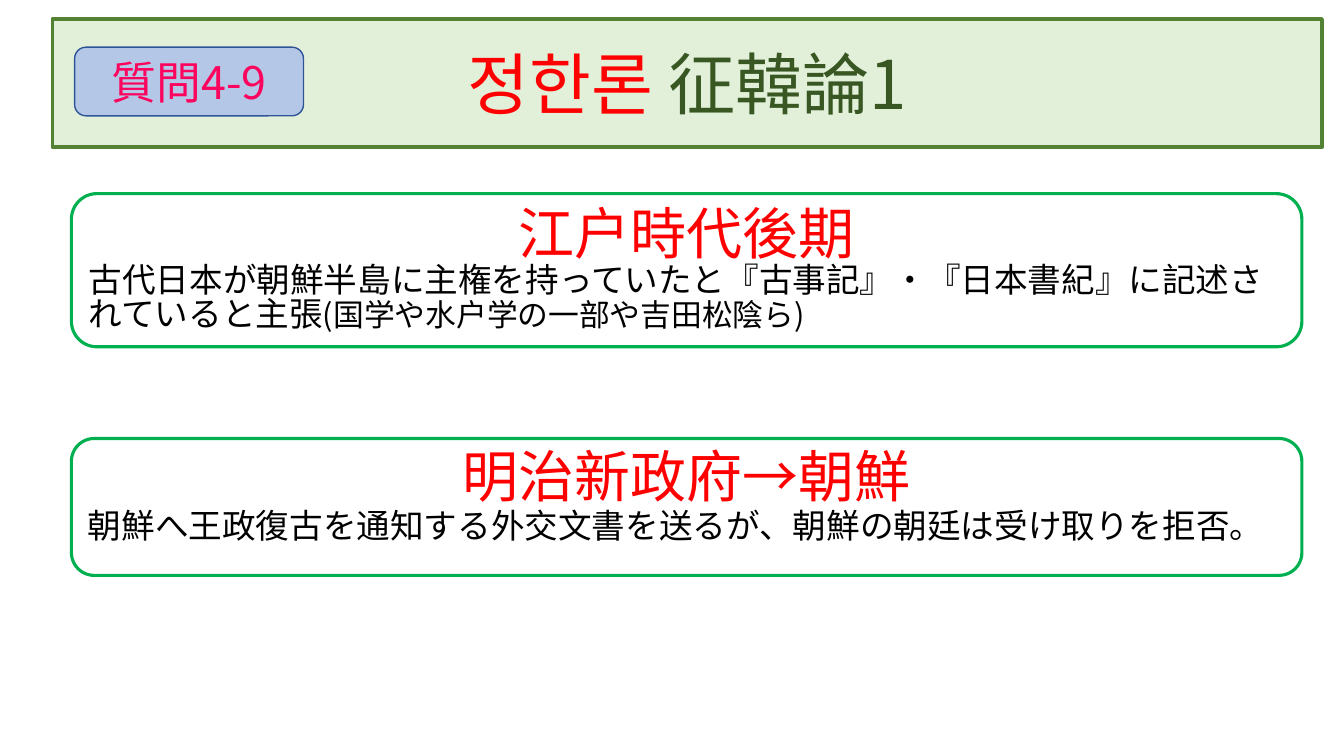
"""Build the slide on the Seikanron debate, question 4-9."""
from dataclasses import dataclass
from typing import Optional

from lxml import etree
from pptx import Presentation
from pptx.dml.color import RGBColor
from pptx.enum import shapes, text
from pptx.oxml import ns
from pptx.util import Cm, Pt

JAPANESE = "Noto Sans CJK JP"
KOREAN = "Noto Sans CJK KR"
RED = "FF0000"
BLACK = "000000"
GREEN = "00B050"
INSET = 0.13


@dataclass(frozen=True)
class Phrase:
    wording: str
    size: float
    color: str
    font: str = JAPANESE


@dataclass(frozen=True)
class Line:
    phrases: tuple[Phrase, ...]
    centred: bool = True
    spacing: Optional[float] = None


@dataclass(frozen=True)
class Panel:
    left: float
    top: float
    width: float
    height: float
    outline: str
    weight: float
    lines: tuple[Line, ...]
    fill: Optional[str] = None
    kind: shapes.MSO_SHAPE = shapes.MSO_SHAPE.ROUNDED_RECTANGLE
    bottom_inset: float = INSET


def rgb(value: str) -> RGBColor:
    return RGBColor.from_string(value)


def topic(top: float, height: float, heading: str, body: tuple[Phrase, ...],
          body_spacing: float, bottom_inset: float = INSET) -> Panel:
    lines = (Line((Phrase(heading, 40, RED),), spacing=42),
             Line(body, centred=False, spacing=body_spacing))
    return Panel(1.8, top, 31.01, height, GREEN, 2.25, lines,
                 bottom_inset=bottom_inset)


def write_phrase(paragraph, phrase: Phrase) -> None:
    run = paragraph.add_run()
    run.text = phrase.wording
    run.font.size = Pt(phrase.size)
    run.font.color.rgb = rgb(phrase.color)
    run.font.name = phrase.font
    east_asian = etree.SubElement(run.font._element, ns.qn("a:ea"))
    east_asian.set("typeface", phrase.font)


def draw_panel(slide, panel: Panel) -> None:
    box = slide.shapes.add_shape(panel.kind, Cm(panel.left), Cm(panel.top),
                                 Cm(panel.width), Cm(panel.height))
    box.shadow.inherit = False
    box.line.color.rgb = rgb(panel.outline)
    box.line.width = Pt(panel.weight)
    if panel.fill:
        box.fill.solid()
        box.fill.fore_color.rgb = rgb(panel.fill)
    else:
        box.fill.background()
    frame = box.text_frame
    frame.word_wrap = True
    frame.vertical_anchor = text.MSO_ANCHOR.MIDDLE
    frame.margin_bottom = Cm(panel.bottom_inset)
    for index, line in enumerate(panel.lines):
        paragraph = frame.add_paragraph() if index else frame.paragraphs[0]
        paragraph.alignment = (text.PP_ALIGN.CENTER if line.centred
                               else text.PP_ALIGN.LEFT)
        if line.spacing:
            paragraph.line_spacing = Pt(line.spacing)
        for phrase in line.phrases:
            write_phrase(paragraph, phrase)


PANELS = (
    Panel(1.32, 0.48, 32, 3.23, "548235", 2.5,
          (Line((Phrase("정한론", 48, RED, KOREAN),
                 Phrase(" 征韓論1", 48, "385723"))),),
          "E2F0D9", shapes.MSO_SHAPE.RECTANGLE),
    topic(4.88, 3.86, "江戸時代後期",
          (Phrase("古代日本が朝鮮半島に主権を持っていたと『古事記』・"
                  "『日本書紀』に記述されていると主張", 24, BLACK),
           Phrase("(国学や水戸学の一部や吉田松陰ら)", 22, BLACK)), 24),
    topic(11.05, 3.45, "明治新政府→朝鮮",
          (Phrase("朝鮮へ王政復古を通知する外交文書を送るが、"
                  "朝鮮の朝廷は受け取りを拒否。", 24, BLACK),), 26, 0.62),
    Panel(1.88, 1.19, 5.77, 1.73, "2F5597", 1,
          (Line((Phrase("質問4-9", 32, "FC035D"),)),),
          "B4C7E7", shapes.MSO_SHAPE.FLOWCHART_ALTERNATE_PROCESS),
)


def main() -> None:
    deck = Presentation()
    deck.slide_width = Cm(33.87)
    deck.slide_height = Cm(19.05)
    slide = deck.slides.add_slide(deck.slide_layouts[6])
    for panel in PANELS:
        draw_panel(slide, panel)
    deck.save("out.pptx")


if __name__ == "__main__":
    main()
